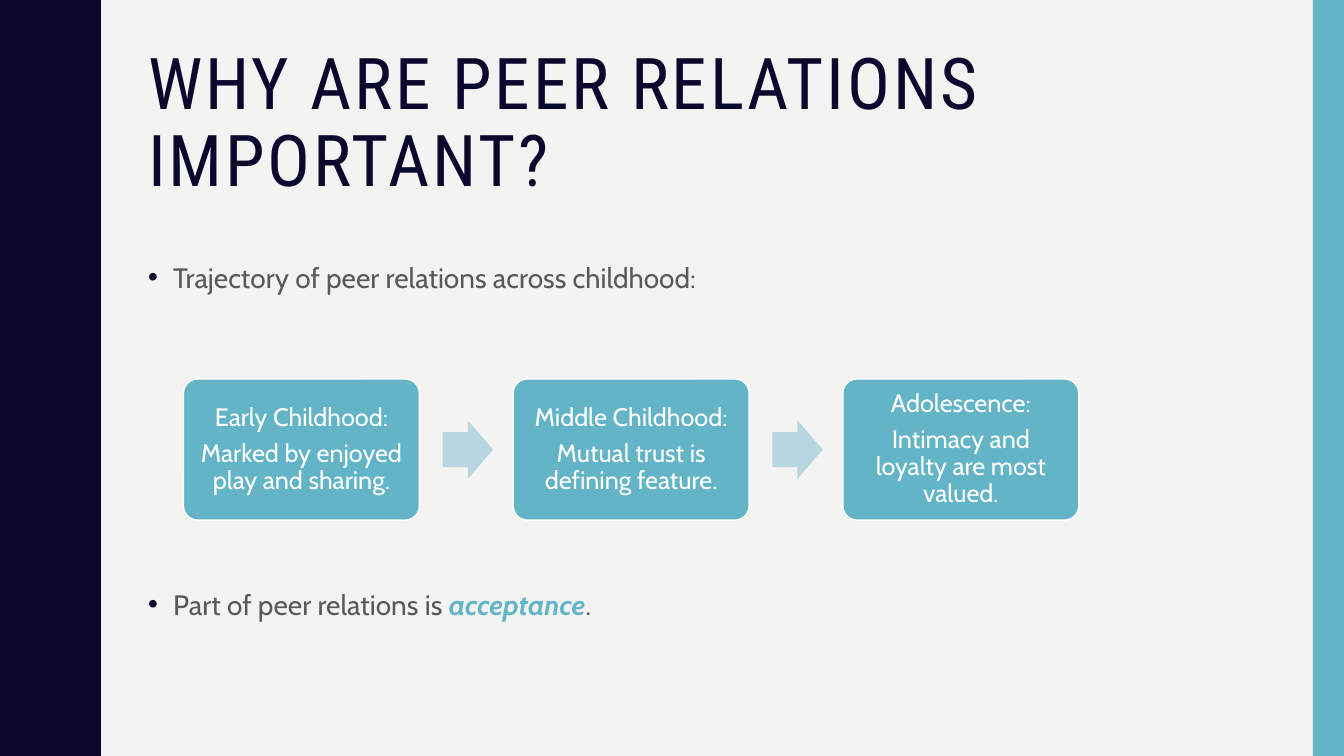
from dataclasses import dataclass

from lxml.etree import SubElement
from pptx import Presentation
from pptx.dml.color import RGBColor
from pptx.enum.shapes import MSO_SHAPE
from pptx.enum.text import MSO_ANCHOR, MSO_AUTO_SIZE, PP_ALIGN
from pptx.oxml.ns import qn
from pptx.shapes.autoshape import Shape
from pptx.slide import Slide
from pptx.text.text import Font, _Paragraph
from pptx.util import Inches, Pt


@dataclass(frozen=True)
class Theme:
    background: str = "F3F3F2"
    navy: str = "0B082E"
    teal: str = "62B4C6"
    pale_teal: str = "B7D6DF"
    gray: str = "595959"
    white: str = "FFFFFF"
    title_font: str = "Roboto Condensed"
    body_font: str = "Cabin"
    title_size: int = 51
    body_size: int = 20
    stage_size: int = 18


@dataclass(frozen=True)
class Area:
    left: float
    top: float
    width: float
    height: float

    def lengths(self) -> list[int]:
        return [Inches(value) for value in (self.left, self.top, self.width, self.height)]


@dataclass(frozen=True)
class Stage:
    name: str
    description: str


@dataclass(frozen=True)
class Bullet:
    spans: tuple[str, ...]
    space_before: int


THEME = Theme()
SLIDE_WIDTH, SLIDE_HEIGHT = 13.33, 7.5

STAGES = [
    Stage("Early Childhood:", "Marked by enjoyed play and sharing."),
    Stage("Middle Childhood:", "Mutual trust is defining feature."),
    Stage("Adolescence:", "Intimacy and loyalty are most valued."),
]
FIRST_STAGE = Area(1.82, 3.76, 2.34, 1.4)
STAGE_PITCH = 3.27
ARROW_WIDTH, ARROW_HEIGHT, ARROW_GAP = 0.5, 0.58, 0.23

# The second span of a bullet is emphasised
BULLETS = [
    Bullet(("Trajectory of peer relations across childhood:",), 7),
    Bullet(("Part of peer relations is ", "acceptance", "."), 207),
]

# Half a wave of the left border, from trough to crest
HALF_WAVE = 0.75
WAVE_PROFILE = [
    (0.78, 0), (0.78, 0.07), (0.79, 0.14), (0.8, 0.2), (0.81, 0.25),
    (0.83, 0.29), (0.85, 0.33), (0.87, 0.38), (0.89, 0.42), (0.91, 0.46),
    (0.93, 0.5), (0.95, 0.55), (0.96, 0.61), (0.97, 0.68), (0.97, 0.75),
]


def paint(shape: Shape, color: str) -> None:
    shape.shadow.inherit = False
    shape.fill.solid()
    shape.fill.fore_color.rgb = RGBColor.from_string(color)
    shape.line.fill.background()


def style_font(font: Font, name: str, size: int, color: str) -> None:
    font.name = name
    font.size = Pt(size)
    font.color.rgb = RGBColor.from_string(color)


def add_block(slide: Slide, kind: MSO_SHAPE, area: Area, color: str) -> Shape:
    block = slide.shapes.add_shape(kind, *area.lengths())
    paint(block, color)
    return block


def add_wavy_border(slide: Slide) -> None:
    points = []
    for index in range(round(SLIDE_HEIGHT / HALF_WAVE)):
        start = index * HALF_WAVE
        if index % 2 == 0:
            points += [(x, start + y) for x, y in WAVE_PROFILE]
        else:
            points += [(x, start + HALF_WAVE - y) for x, y in reversed(WAVE_PROFILE)]
    points.append((0, SLIDE_HEIGHT))
    builder = slide.shapes.build_freeform(0, 0, scale=Inches(1))
    builder.add_line_segments(points, close=True)
    paint(builder.convert_to_shape(), THEME.navy)


def add_title(slide: Slide) -> None:
    title = slide.shapes.title
    title.left, title.top, title.width, title.height = Area(1.37, 0.42, 11.13, 1.63).lengths()
    frame = title.text_frame
    frame.text = "WHY ARE PEER RELATIONS IMPORTANT?"
    frame.word_wrap = True
    frame.auto_size = MSO_AUTO_SIZE.NONE
    frame.vertical_anchor = MSO_ANCHOR.MIDDLE
    para = frame.paragraphs[0]
    para.alignment = PP_ALIGN.LEFT
    para.line_spacing = 0.9
    font = para.runs[0].font
    style_font(font, THEME.title_font, THEME.title_size, THEME.navy)
    para.runs[0]._r.get_or_add_rPr().set("spc", "200")


def set_bullet(para: _Paragraph) -> None:
    properties = para._p.get_or_add_pPr()
    properties.set("marL", str(Inches(0.25)))
    properties.set("indent", str(Inches(-0.25)))
    color = SubElement(properties, qn("a:buClr"))
    SubElement(color, qn("a:srgbClr"), val=THEME.navy)
    SubElement(properties, qn("a:buFont"), typeface="Arial")
    SubElement(properties, qn("a:buChar"), char="•")


def add_bullets(slide: Slide) -> None:
    box = slide.shapes.add_textbox(*Area(1.37, 2.5, 11.13, 4.57).lengths())
    frame = box.text_frame
    frame.word_wrap = True
    for index, bullet in enumerate(BULLETS):
        para = frame.add_paragraph() if index else frame.paragraphs[0]
        para.line_spacing = 1.1
        para.space_before = Pt(bullet.space_before)
        set_bullet(para)
        for position, text in enumerate(bullet.spans):
            span = para.add_run()
            span.text = text
            emphasised = position == 1
            color = THEME.teal if emphasised else THEME.gray
            style_font(span.font, THEME.body_font, THEME.body_size, color)
            span.font.bold = span.font.italic = emphasised


def add_stage(slide: Slide, stage: Stage, area: Area) -> None:
    box = add_block(slide, MSO_SHAPE.ROUNDED_RECTANGLE, area, THEME.teal)
    box.adjustments[0] = 0.1
    box.line.color.rgb = RGBColor.from_string(THEME.white)
    box.line.width = Pt(1)
    frame = box.text_frame
    frame.text = f"{stage.name}\n{stage.description}"
    frame.word_wrap = True
    frame.vertical_anchor = MSO_ANCHOR.MIDDLE
    frame.margin_left = frame.margin_right = Inches(0.07)
    frame.margin_top = frame.margin_bottom = Inches(0.07)
    for para in frame.paragraphs:
        para.alignment = PP_ALIGN.CENTER
        para.line_spacing = 0.9
        para.space_after = Pt(6.3)
        style_font(para.runs[0].font, THEME.body_font, THEME.stage_size, THEME.white)


def add_trajectory(slide: Slide) -> None:
    first = FIRST_STAGE
    arrow_top = first.top + (first.height - ARROW_HEIGHT) / 2
    for index, stage in enumerate(STAGES):
        left = first.left + index * STAGE_PITCH
        add_stage(slide, stage, Area(left, first.top, first.width, first.height))
        if index < len(STAGES) - 1:
            arrow_left = left + first.width + ARROW_GAP
            arrow_area = Area(arrow_left, arrow_top, ARROW_WIDTH, ARROW_HEIGHT)
            arrow = add_block(slide, MSO_SHAPE.RIGHT_ARROW, arrow_area, THEME.pale_teal)
            arrow.adjustments[0] = 0.6
            arrow.adjustments[1] = 0.5


def main() -> None:
    deck = Presentation()
    deck.slide_width, deck.slide_height = Inches(SLIDE_WIDTH), Inches(SLIDE_HEIGHT)
    page = deck.slides.add_slide(deck.slide_layouts.get_by_name("Title Only"))
    page.background.fill.solid()
    page.background.fill.fore_color.rgb = RGBColor.from_string(THEME.background)

    # Side decorations
    add_wavy_border(page)
    add_block(page, MSO_SHAPE.RECTANGLE, Area(13.02, 0, 0.31, SLIDE_HEIGHT), THEME.teal)

    # Content
    add_title(page)
    add_bullets(page)
    add_trajectory(page)
    deck.save("out.pptx")


if __name__ == "__main__":
    main()
